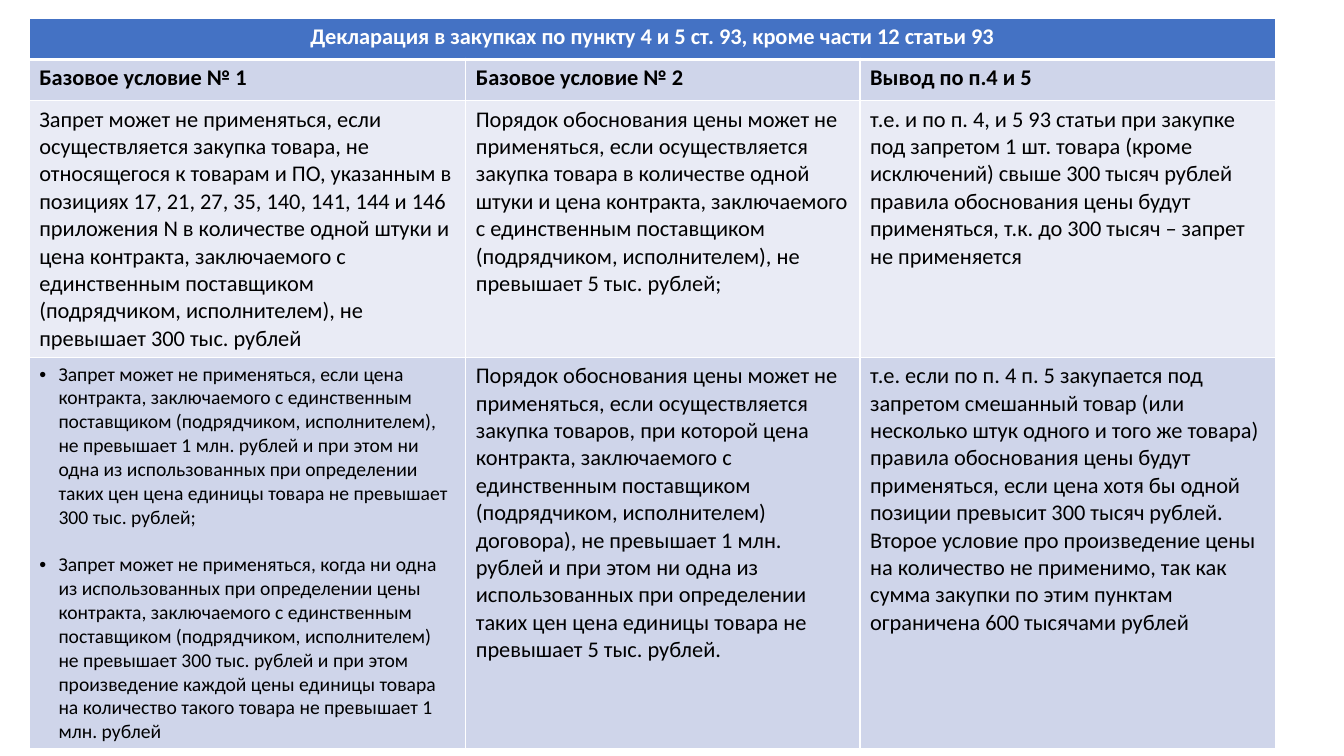
"""Build a slide with a table of price justification rules under purchasing bans."""
from lxml.etree import fromstring
from pptx import Presentation
from pptx.dml.color import RGBColor
from pptx.enum.text import PP_ALIGN
from pptx.oxml.ns import nsdecls
from pptx.util import Inches, Pt

WHITE = RGBColor(0xFF, 0xFF, 0xFF)
BLACK = RGBColor(0, 0, 0)
BLUE = RGBColor(0x44, 0x72, 0xC4)
BAND_DARK = RGBColor(0xCF, 0xD5, 0xEA)
BAND_LIGHT = RGBColor(0xE9, 0xEB, 0xF5)

TITLE = "Декларация в закупках по пункту 4 и 5 ст. 93, кроме части 12 статьи 93"
HEADINGS = ["Базовое условие № 1", "Базовое условие № 2", "Вывод по п.4 и 5"]
SINGLE_ITEM = [
    "Запрет может не применяться, если осуществляется закупка товара, не относящегося к товарам и ПО, "
    "указанным в позициях 17, 21, 27, 35, 140, 141, 144 и 146 приложения N в количестве одной штуки и цена "
    "контракта, заключаемого с единственным поставщиком (подрядчиком, исполнителем), не превышает 300 тыс. рублей",
    "Порядок обоснования цены может не применяться, если осуществляется закупка товара в количестве одной штуки "
    "и цена контракта, заключаемого с единственным поставщиком (подрядчиком, исполнителем), не превышает "
    "5 тыс. рублей;",
    "т.е. и по п. 4, и 5 93 статьи при закупке под запретом 1 шт. товара (кроме исключений) свыше 300 тысяч "
    "рублей правила обоснования цены будут применяться, т.к. до 300 тысяч – запрет не применяется",
]
BAN_BULLETS = [
    "Запрет может не применяться, если цена контракта, заключаемого с единственным поставщиком (подрядчиком, "
    "исполнителем), не превышает 1 млн. рублей и при этом ни одна из использованных при определении таких цен "
    "цена единицы товара не превышает 300 тыс. рублей;",
    "Запрет может не применяться, когда ни одна из использованных при определении цены контракта, заключаемого "
    "с единственным поставщиком (подрядчиком, исполнителем) не превышает 300 тыс. рублей и при этом произведение "
    "каждой цены единицы товара на количество такого товара не превышает 1 млн. рублей",
]
SEVERAL_ITEMS = [
    "Порядок обоснования цены может не применяться, если осуществляется закупка товаров, при которой цена "
    "контракта, заключаемого с единственным поставщиком (подрядчиком, исполнителем) договора), не превышает "
    "1 млн. рублей и при этом ни одна из использованных при определении таких цен цена единицы товара "
    "не превышает 5 тыс. рублей.",
]
SEVERAL_RESULT = [
    "т.е. если по п. 4 п. 5 закупается под запретом смешанный товар (или несколько штук одного и того же товара) "
    "правила обоснования цены будут применяться, если цена хотя бы одной позиции превысит 300 тысяч рублей.",
    "Второе условие про произведение цены на количество не применимо, так как сумма закупки по этим пунктам "
    "ограничена 600 тысячами рублей",
]
ROWS = [
    [[TITLE], [], []],
    [[heading] for heading in HEADINGS],
    [[text] for text in SINGLE_ITEM],
    [BAN_BULLETS, SEVERAL_ITEMS, SEVERAL_RESULT],
]
ROW_FILLS = [BLUE, BAND_DARK, BAND_LIGHT, BAND_DARK]
ROW_HEIGHTS = [0.41, 0.41, 2.54, 3.87]
COLUMN_WIDTHS = [4.33, 3.91, 4.12]
LEFT, TOP = 0.29, 0.18
BULLET_INDENT = Inches(0.19)


def set_borders(cell, row):
    """Draw white cell borders, thicker between the title and the rest."""
    widths = {"L": 1, "R": 1, "T": 3 if row == 1 else 1, "B": 3 if row == 0 else 1}
    for side, width in widths.items():
        cell._tc.get_or_add_tcPr().append(fromstring(
            f'<a:ln{side} {nsdecls("a")} w="{Pt(width)}"><a:solidFill>'
            f'<a:srgbClr val="{WHITE}"/></a:solidFill></a:ln{side}>'))


def add_bullet(para):
    """Give a paragraph a round bullet with a hanging indent."""
    properties = para._p.get_or_add_pPr()
    properties.set("marL", str(BULLET_INDENT))
    properties.set("indent", str(-BULLET_INDENT))
    for element in ('<a:buFont {} typeface="Arial"/>', '<a:buChar {} char="•"/>'):
        properties.append(fromstring(element.format(nsdecls("a"))))


def fill_cell(cell, texts, row):
    """Colour a cell and write its paragraphs."""
    set_borders(cell, row)
    cell.fill.solid()
    cell.fill.fore_color.rgb = ROW_FILLS[row]
    bulleted = texts is BAN_BULLETS
    for index, text in enumerate(texts):
        para = cell.text_frame.add_paragraph() if index else cell.text_frame.paragraphs[0]
        if bulleted and index:
            para.space_before = Pt(17)
        if bulleted:
            add_bullet(para)
        if row == 0:
            para.alignment = PP_ALIGN.CENTER
        span = para.add_run()
        span.text = text
        span.font.name = "Calibri"
        span.font.size = Pt(14 if bulleted else 16)
        span.font.bold = row < 2
        span.font.color.rgb = WHITE if row == 0 else BLACK


def main():
    """Create the deck and save it."""
    deck = Presentation()
    deck.slide_width, deck.slide_height = Inches(13.33), Inches(7.5)
    page = deck.slides.add_slide(deck.slide_layouts[6])
    table = page.shapes.add_table(
        len(ROWS), len(COLUMN_WIDTHS), Inches(LEFT), Inches(TOP),
        Inches(sum(COLUMN_WIDTHS)), Inches(sum(ROW_HEIGHTS))).table
    table.horz_banding = False
    for column, width in zip(table.columns, COLUMN_WIDTHS):
        column.width = Inches(width)
    for row, cells in enumerate(ROWS):
        table.rows[row].height = Inches(ROW_HEIGHTS[row])
        for column, texts in enumerate(cells):
            fill_cell(table.cell(row, column), texts, row)
    table.cell(0, 0).merge(table.cell(0, len(COLUMN_WIDTHS) - 1))
    deck.save("out.pptx")


if __name__ == "__main__":
    main()
